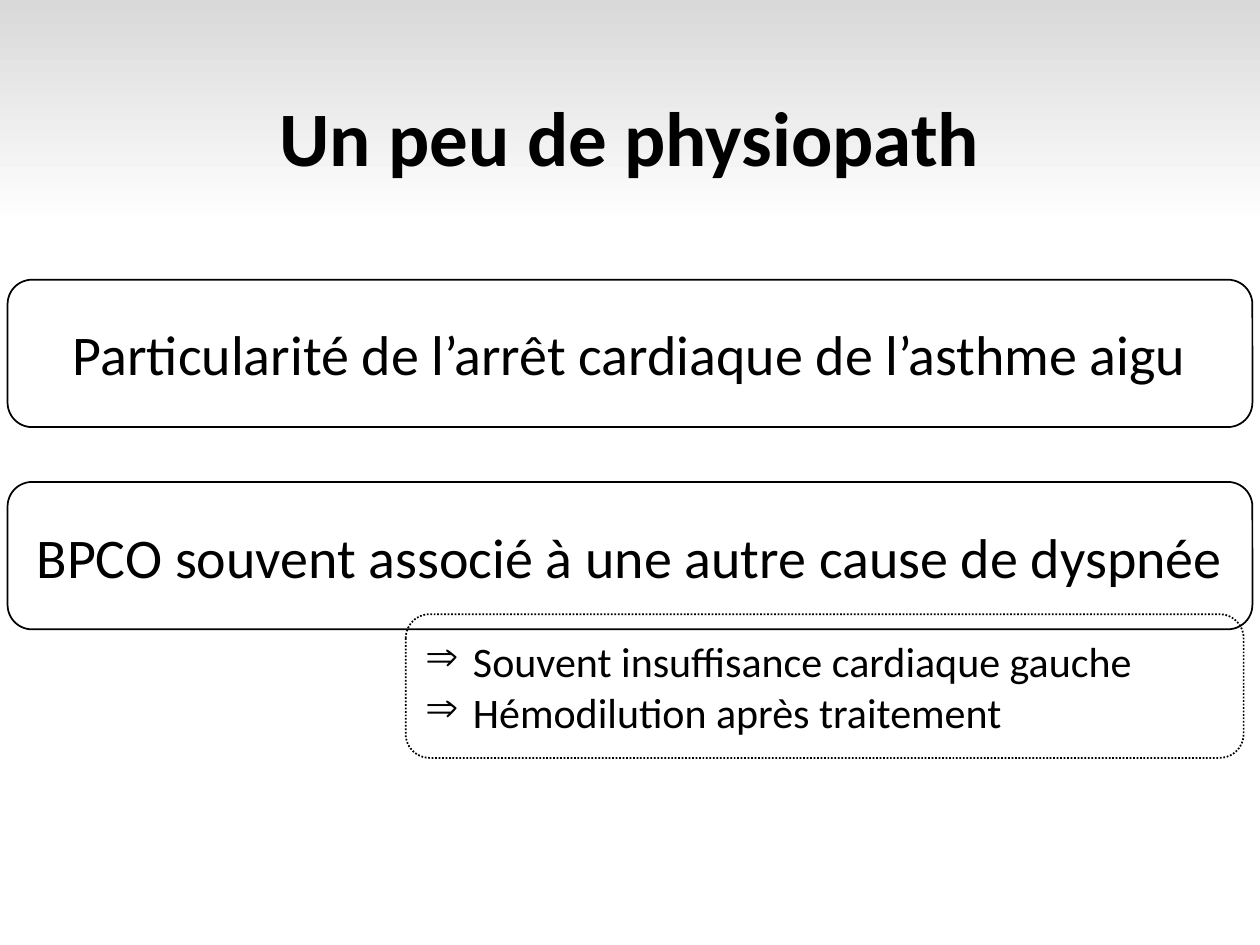
from dataclasses import dataclass

from lxml.etree import SubElement
from pptx import Presentation
from pptx.dml.color import RGBColor
from pptx.enum.dml import MSO_LINE_DASH_STYLE as Dash
from pptx.enum.shapes import MSO_SHAPE as Shape
from pptx.enum.text import MSO_ANCHOR as Anchor, PP_ALIGN as Align
from pptx.oxml.ns import qn
from pptx.util import Inches, Pt

WIDE, HIGH = Inches(10), Inches(7.5)
FONT, INK = "Calibri", "000000"


@dataclass
class Box:
    """A rounded box, placed by shares of the slide's size."""
    left: float
    top: float
    width: float
    height: float
    lines: list[str]
    size: int
    notes: bool = False  # dotted outline and arrow bullets


def color(code: str) -> RGBColor:
    return RGBColor.from_string(code)


def place(item, left: float, top: float, width: float, height: float) -> None:
    item.left, item.width = int(left * WIDE), int(width * WIDE)
    item.top, item.height = int(top * HIGH), int(height * HIGH)


def write(frame, lines: list[str], size: int, align: Align, bold: bool = False) -> None:
    frame.text = "\n".join(lines)
    frame.word_wrap = True
    frame.vertical_anchor = Anchor.MIDDLE
    for par in frame.paragraphs:
        par.alignment = align
        for run in par.runs:
            font = run.font
            font.name, font.size, font.bold = FONT, Pt(size), bold
            font.color.rgb = color(INK)


def bullet(par, mark: str, indent: float) -> None:
    props = par._p.get_or_add_pPr()
    props.set("marL", str(Inches(indent)))
    props.set("indent", str(-Inches(indent)))
    SubElement(props, qn("a:buChar")).set("char", mark)


def draw(slide, box: Box) -> None:
    item = slide.shapes.add_shape(Shape.ROUNDED_RECTANGLE, 0, 0, 0, 0)
    place(item, box.left, box.top, box.width, box.height)
    item.shadow.inherit = False
    item.fill.background()
    item.line.color.rgb = color(INK)
    item.line.width = Pt(1)
    write(item.text_frame, box.lines, box.size, Align.LEFT if box.notes else Align.CENTER)
    if box.notes:
        item.line.dash_style = Dash.ROUND_DOT
        for par in item.text_frame.paragraphs:
            bullet(par, "⇒", 0.38)


# Main boxes share one column, notes overlap the second
SIDE, TALL = 0.006, 0.156
BOXES = [
    Box(SIDE, 0.51, 1 - 2 * SIDE, TALL,
        ["BPCO souvent associé à une autre cause de dyspnée"], 32),
    Box(0.322, 0.65, 0.665, 0.152,
        ["Souvent insuffisance cardiaque gauche", "Hémodilution après traitement"], 24, True),
    Box(SIDE, 0.296, 1 - 2 * SIDE, TALL,
        ["Particularité de l’arrêt cardiaque de l’asthme aigu"], 32),
]


def main() -> None:
    deck = Presentation()
    deck.slide_width, deck.slide_height = WIDE, HIGH
    slide = deck.slides.add_slide(deck.slide_layouts[5])

    # Background: grey fading to white from the top
    fill = slide.background.fill
    fill.gradient()
    fill.gradient_angle = 270
    for stop, (pos, code) in zip(fill.gradient_stops, [(0, "D9D9D9"), (0.24, "FFFFFF")]):
        stop.position, stop.color.rgb = pos, color(code)

    # Title
    title = slide.shapes.title
    place(title, 0.069, 0.053, 0.862, 0.193)
    write(title.text_frame, ["Un peu de physiopath"], 44, Align.CENTER, True)
    title.text_frame.paragraphs[0].line_spacing = 0.9

    # Boxes
    for box in BOXES:
        draw(slide, box)

    deck.save("out.pptx")


if __name__ == "__main__":
    main()
